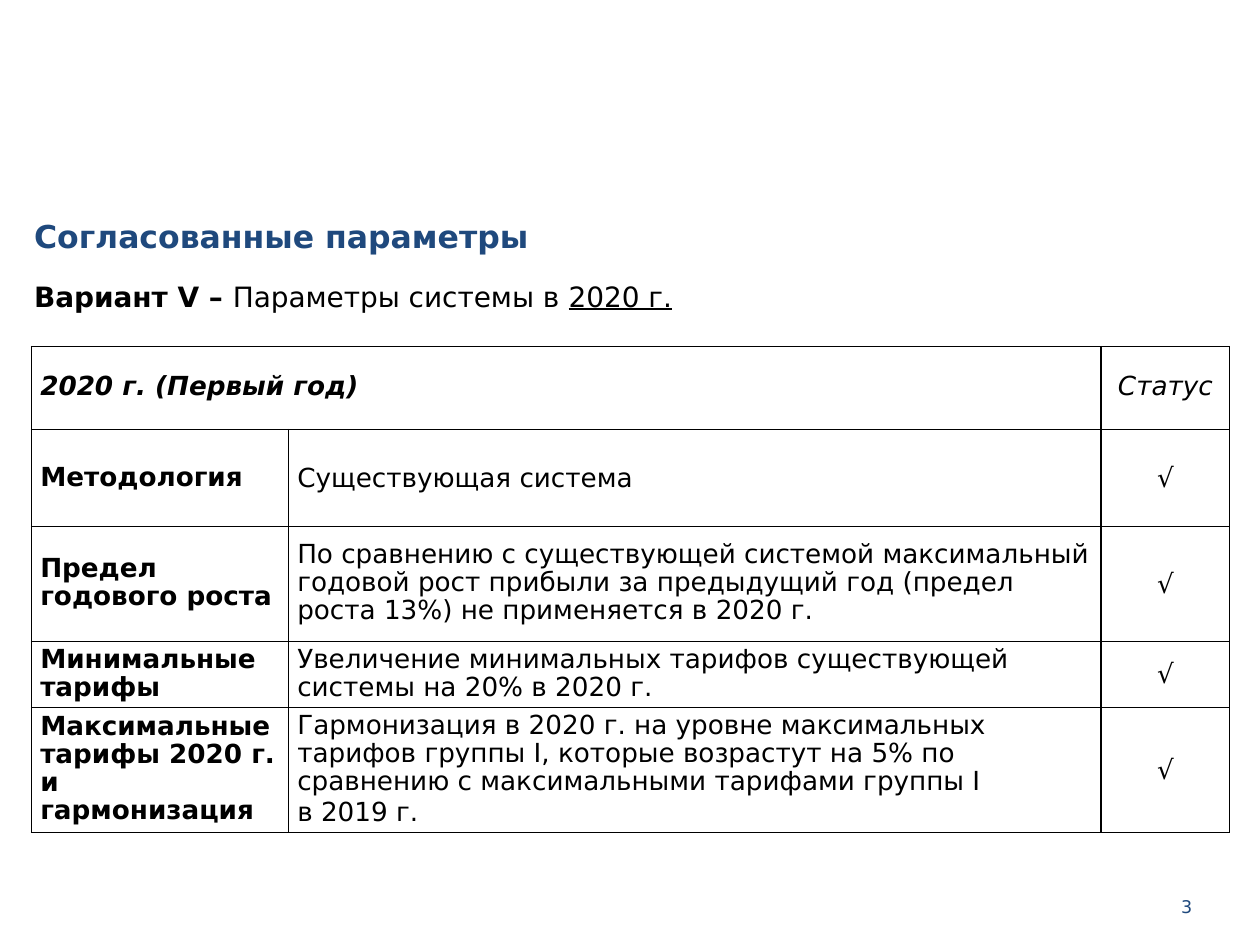
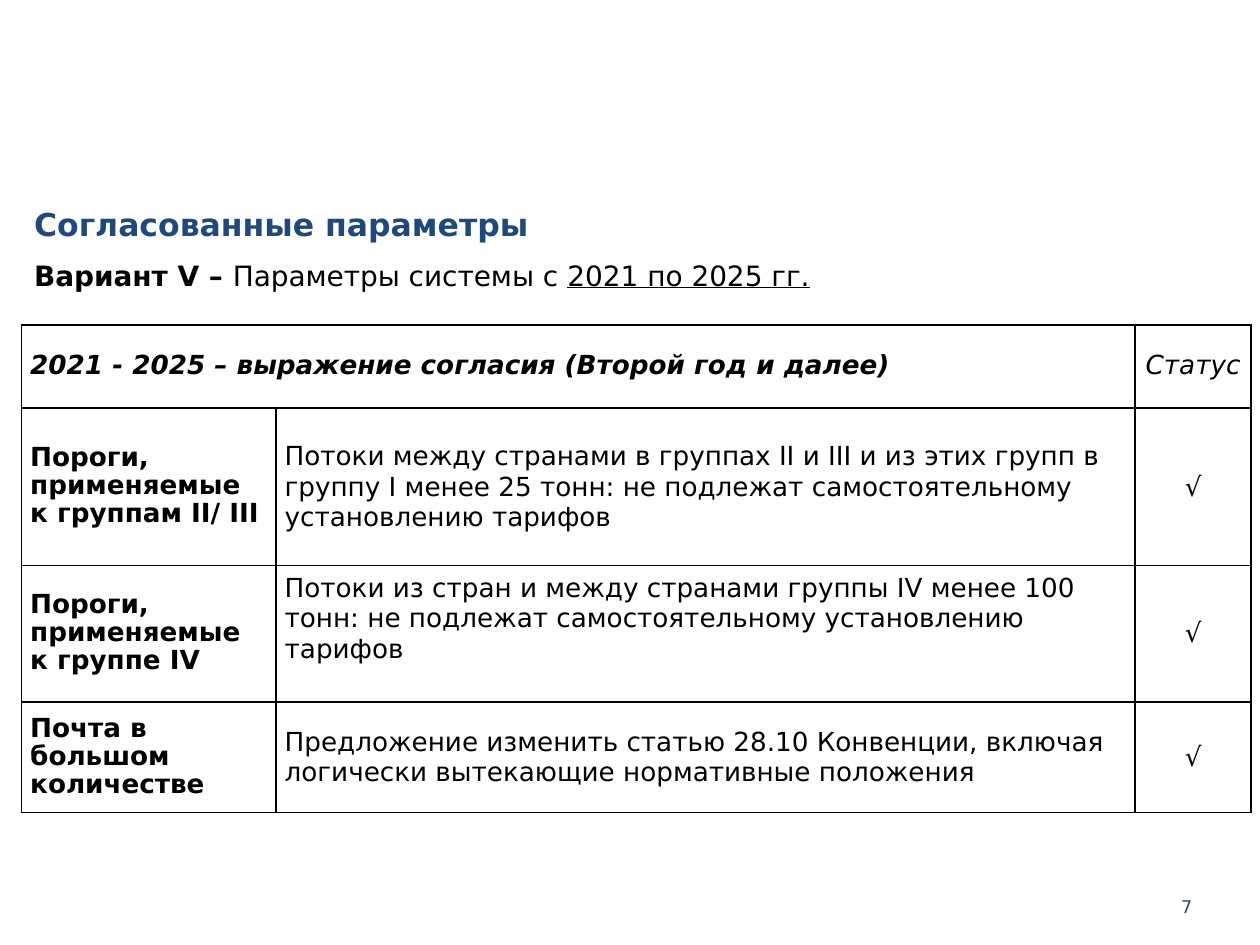
from lxml.etree import SubElement
from pptx import Presentation
from pptx.dml.color import RGBColor
from pptx.enum.text import MSO_ANCHOR, MSO_AUTO_SIZE, PP_ALIGN
from pptx.oxml import parse_xml
from pptx.oxml.ns import nsdecls, qn
from pptx.util import Inches, Pt

FONT = "DejaVu Sans"
NAVY, BLACK, WHITE = "1F497D", "000000", "FFFFFF"
LEFT, MID = PP_ALIGN.LEFT, PP_ALIGN.CENTER

deck = Presentation()
deck.slide_width, deck.slide_height = Inches(10), Inches(7.5)
col, row = deck.slide_width / 100, deck.slide_height / 75


def tint(code):
    return RGBColor.from_string(code)


def write(para, text, size=15, color=BLACK, bold=False, ital=False,
          under=False, side=LEFT, tight=False):
    para.alignment = side
    para.space_before = para.space_after = Pt(1 if tight else 0)
    if tight:
        para.line_spacing = Pt(16)
    run = para.add_run()
    run.text = text
    font = run.font
    font.name, font.size, font.color.rgb = FONT, Pt(size), tint(color)
    font.bold, font.italic, font.underline = bold, ital, under


pages = [
    dict(
        num="3", top=16.7, lead=21.7, when="Параметры системы в ", year="2020 г.",
        grid=(2.5, 27.5), cols=(20.4, 64.5, 10.2), rows=(6.6, 7.7, 9.1, 5, 9.1),
        head="2020 г. (Первый год)",
        items=[
            ("Методология", ["Существующая система"], False, 0),
            ("Предел годового роста",
             ["По сравнению с существующей системой максимальный годовой рост "
              "прибыли за предыдущий год (предел роста 13%) не применяется в 2020 г."],
             True, 0),
            ("Минимальные тарифы",
             ["Увеличение минимальных тарифов существующей системы на 20% в 2020 г."],
             True, 0),
            ("Максимальные тарифы 2020 г. и гармонизация",
             ["Гармонизация в 2020 г. на уровне максимальных тарифов группы I, которые "
              "возрастут на 5% по сравнению с максимальными тарифами группы I",
              "в 2019 г."], True, 0),
        ],
    ),
    dict(
        num="7", top=15.8, lead=20, when="Параметры системы с ", year="2021 по 2025 гг.",
        grid=(1.7, 25.8), cols=(20.2, 68.2, 9.2), rows=(6.6, 12.5, 10.8, 8.8),
        head="2021 - 2025 – выражение согласия (Второй год и далее)",
        items=[
            ("Пороги, применяемые к группам II/ III",
             ["Потоки между странами в группах II и III и из этих групп в группу I "
              "менее 25 тонн: не подлежат самостоятельному установлению тарифов"],
             False, 0),
            ("Пороги, применяемые к группе IV",
             ["Потоки из стран и между странами группы IV менее 100 тонн: "
              "не подлежат самостоятельному установлению тарифов"], False, 2.4),
            ("Почта в большом количестве",
             ["Предложение изменить статью 28.10 Конвенции, включая "
              "логически вытекающие нормативные положения"], False, 0),
        ],
    ),
]

for page in pages:
    slide = deck.slides.add_slide(deck.slide_layouts[1])
    title, body = slide.shapes.title, slide.placeholders[1]
    foot = slide.shapes.add_textbox(
        int(60.2 * col), int(70.6 * row), int(35.4 * col), int(2.7 * row))
    for box, top, wide, high in ((title, page["top"], 91.7, 4),
                                 (body, page["lead"], 94.5, 5)):
        box.left, box.top = int(1.7 * col), int(top * row)
        box.width, box.height = int(wide * col), int(high * row)
    for box in (title, body, foot):
        frame = box.text_frame
        frame.word_wrap, frame.auto_size = True, MSO_AUTO_SIZE.NONE
        frame.vertical_anchor = MSO_ANCHOR.TOP
    write(title.text_frame.paragraphs[0], "Согласованные параметры",
          size=18, color=NAVY, bold=True)
    lead = body.text_frame.paragraphs[0]
    prop = lead._p.get_or_add_pPr()
    prop.set("marL", "0")
    prop.set("indent", "0")
    SubElement(prop, qn("a:buNone"))
    write(lead, "Вариант V – ", size=16, bold=True)
    write(lead, page["when"], size=16)
    write(lead, page["year"], size=16, under=True)
    write(foot.text_frame.paragraphs[0], page["num"], size=10, color=NAVY,
          side=PP_ALIGN.RIGHT)

    left, top = page["grid"]
    table = slide.shapes.add_table(
        len(page["rows"]), len(page["cols"]), int(left * col), int(top * row),
        int(sum(page["cols"]) * col), int(sum(page["rows"]) * row)).table
    table.first_row = table.horz_banding = False
    for part, wide in zip(table.columns, page["cols"]):
        part.width = int(wide * col)
    for part, high in zip(table.rows, page["rows"]):
        part.height = int(high * row)
    for cell in table.iter_cells():
        cell.vertical_anchor = MSO_ANCHOR.MIDDLE
        cell.margin_left = cell.margin_right = Inches(0.07)
        cell.margin_top = cell.margin_bottom = Inches(0.04)
        cell.fill.solid()
        cell.fill.fore_color.rgb = tint(WHITE)
        for spot, edge in enumerate(("lnL", "lnR", "lnT", "lnB")):
            cell._tc.get_or_add_tcPr().insert(spot, parse_xml(
                f'<a:{edge} {nsdecls("a")} w="{Pt(1)}"><a:solidFill>'
                f'<a:srgbClr val="{BLACK}"/></a:solidFill></a:{edge}>'))

    table.cell(0, 0).merge(table.cell(0, 1))
    write(table.cell(0, 0).text_frame.paragraphs[0], page["head"],
          bold=True, ital=True, tight=True)
    write(table.cell(0, 2).text_frame.paragraphs[0], "Статус",
          ital=True, side=MID, tight=True)
    for line, (name, notes, tight, gap) in enumerate(page["items"], 1):
        label, note, mark = (table.cell(line, spot) for spot in range(3))
        write(label.text_frame.paragraphs[0], name, bold=True, tight=True)
        note.margin_bottom += int(gap * row)
        for spot, text in enumerate(notes):
            frame = note.text_frame
            para = frame.add_paragraph() if spot else frame.paragraphs[0]
            write(para, text, tight=tight)
            if not spot:
                para.space_before = Pt(0)
        write(mark.text_frame.paragraphs[0], "√", side=MID)

deck.save("out.pptx")
